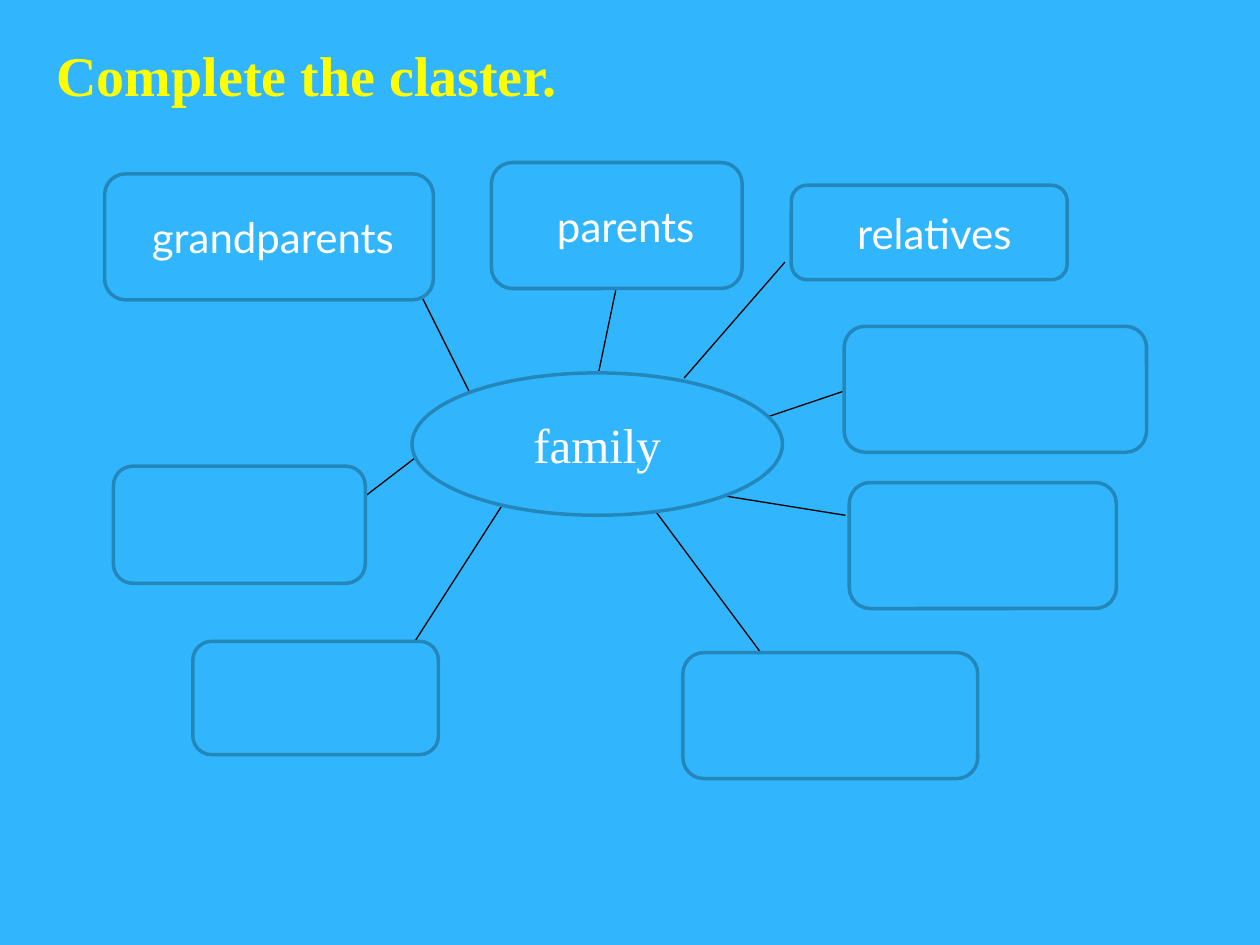
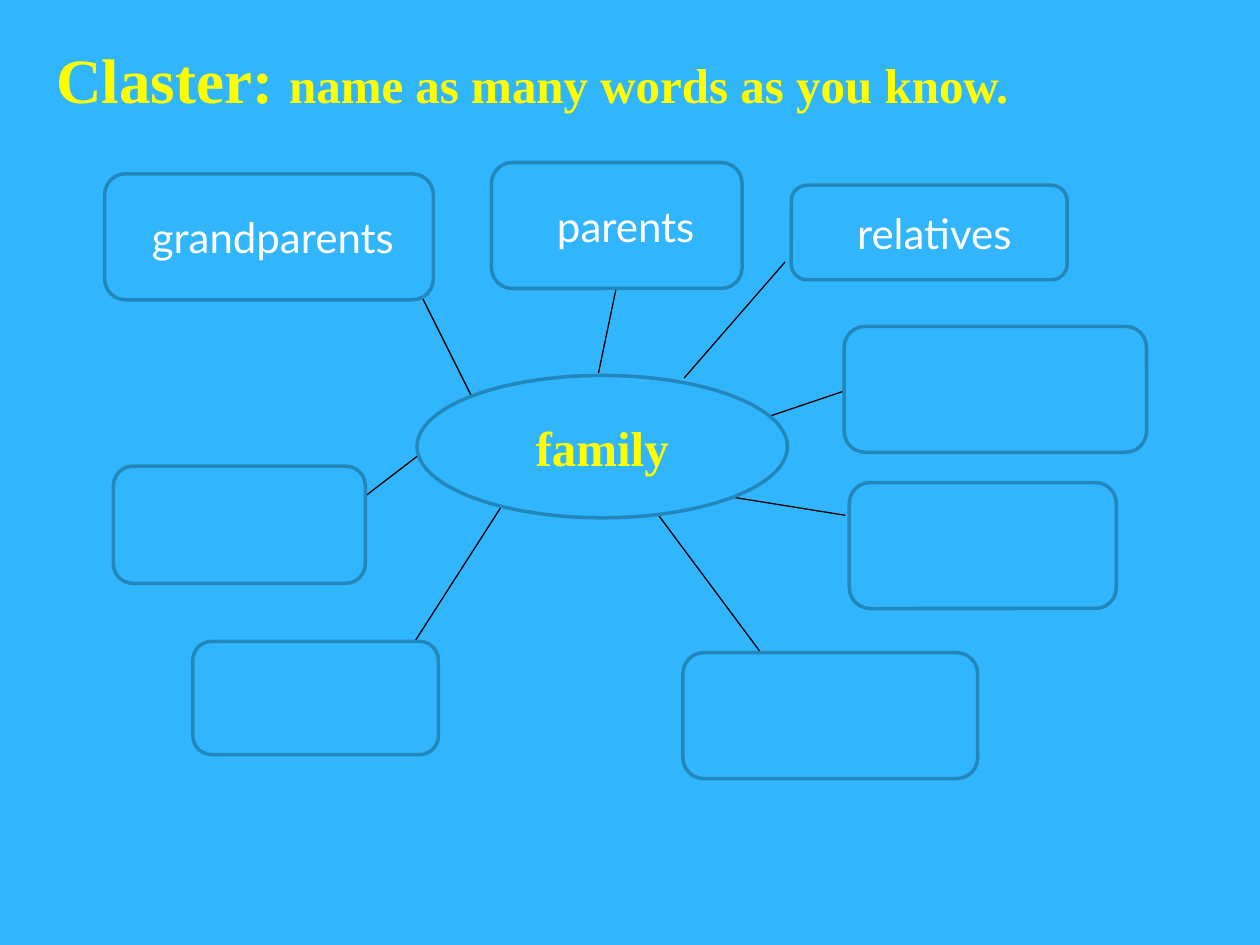
from dataclasses import dataclass
from lxml import etree
from pptx import Presentation
from pptx.dml.color import RGBColor
from pptx.enum import shapes, text
from pptx.oxml.ns import qn
from pptx.util import Emu, Pt

PX = 9144

SLIDES = [
    {"title": [("Complete the claster.", 32)],
     "hub": (327, 296), "hub_color": "FFFFFF", "hub_bold": False},
    {"title": [("Claster: ", 36), ("name as many words as you know.", 28)],
     "hub": (331, 298), "hub_color": "FFFF00", "hub_bold": True},
]
HUB_WORD = "family"
HUB_SIZE = (294, 113)
TITLE_BOX = (35, 27, 790, 185)

BRANCHES = [
    {"word": "grandparents", "box": (83, 138, 261, 100), "shift": 6},
    {"word": "", "box": (90, 370, 200, 93), "shift": 0},
    {"word": "", "box": (542, 518, 234, 100), "shift": 0},
    {"word": "", "box": (674, 383, 212, 100), "shift": 0},
    {"word": "", "box": (670, 259, 240, 100), "shift": 0},
    {"word": "relatives", "box": (628, 147, 219, 75), "shift": 8},
    {"word": "parents", "box": (390, 129, 199, 100), "shift": 14},
    {"word": "", "box": (153, 509, 195, 90), "shift": 0},
]
SPOKES = [
    (543, 300, 623, 208),
    (270, 409, 343, 353),
    (559, 391, 671, 409),
    (516, 400, 615, 533),
    (674, 309, 594, 336),
    (405, 391, 328, 511),
    (385, 336, 321, 208),
    (475, 296, 489, 229),
]


@dataclass(frozen=True)
class Theme:
    back: str = "31B6FD"
    outline: str = "2487BB"
    spoke: str = "000000"
    title: str = "FFFF00"
    word: str = "FFFFFF"
    serif: str = "Times New Roman"
    sans: str = "Lato"
    hub_pt: int = 28
    word_pt: int = 24
    outline_pt: float = 2
    spoke_pt: float = 0.75


THEME = Theme()


def px(*lengths):
    return [Emu(n * PX) for n in lengths]


def paint(fill, color):
    fill.solid()
    fill.fore_color.rgb = RGBColor.from_string(color)


def style(r, font, size, color, bold=False):
    r.font.name = font
    r.font.size = Pt(size)
    r.font.bold = bold
    r.font.color.rgb = RGBColor.from_string(color)


def add_title(s, parts):
    tf = s.shapes.add_textbox(*px(*TITLE_BOX)).text_frame
    tf.word_wrap = True
    for words, size in parts:
        r = tf.paragraphs[0].add_run()
        r.text = words
        style(r, THEME.serif, size, THEME.title, True)


def add_spoke(s, ends):
    line = s.shapes.add_connector(shapes.MSO_CONNECTOR.STRAIGHT, *px(*ends))
    line.line.width = Pt(THEME.spoke_pt)
    paint(line.line.fill, THEME.spoke)
    etree.SubElement(line._element.spPr, qn("a:effectLst"))


def add_bubble(s, kind, box, word, font, size, color, bold=False, shift=0):
    sp = s.shapes.add_shape(kind, *px(*box))
    sp.shadow.inherit = False
    paint(sp.fill, THEME.back)
    paint(sp.line.fill, THEME.outline)
    sp.line.width = Pt(THEME.outline_pt)
    if not word:
        return
    tf = sp.text_frame
    tf.text = word
    tf.margin_left = Emu((10 + shift) * PX)
    tf.vertical_anchor = text.MSO_ANCHOR.MIDDLE
    p = tf.paragraphs[0]
    p.alignment = text.PP_ALIGN.CENTER
    style(p.runs[0], font, size, color, bold)


def add_cluster(prs, content):
    s = prs.slides.add_slide(prs.slide_layouts[6])
    paint(s.background.fill, THEME.back)
    for ends in SPOKES:
        add_spoke(s, ends)
    add_title(s, content["title"])
    add_bubble(s, shapes.MSO_SHAPE.OVAL, content["hub"] + HUB_SIZE, HUB_WORD,
               THEME.serif, THEME.hub_pt, content["hub_color"], content["hub_bold"])
    for branch in BRANCHES:
        add_bubble(s, shapes.MSO_SHAPE.ROUNDED_RECTANGLE, branch["box"], branch["word"],
                   THEME.sans, THEME.word_pt, THEME.word, shift=branch["shift"])


def main():
    prs = Presentation()
    prs.slide_width, prs.slide_height = px(1000, 750)
    for content in SLIDES:
        add_cluster(prs, content)
    prs.save("out.pptx")


if __name__ == "__main__":
    main()
